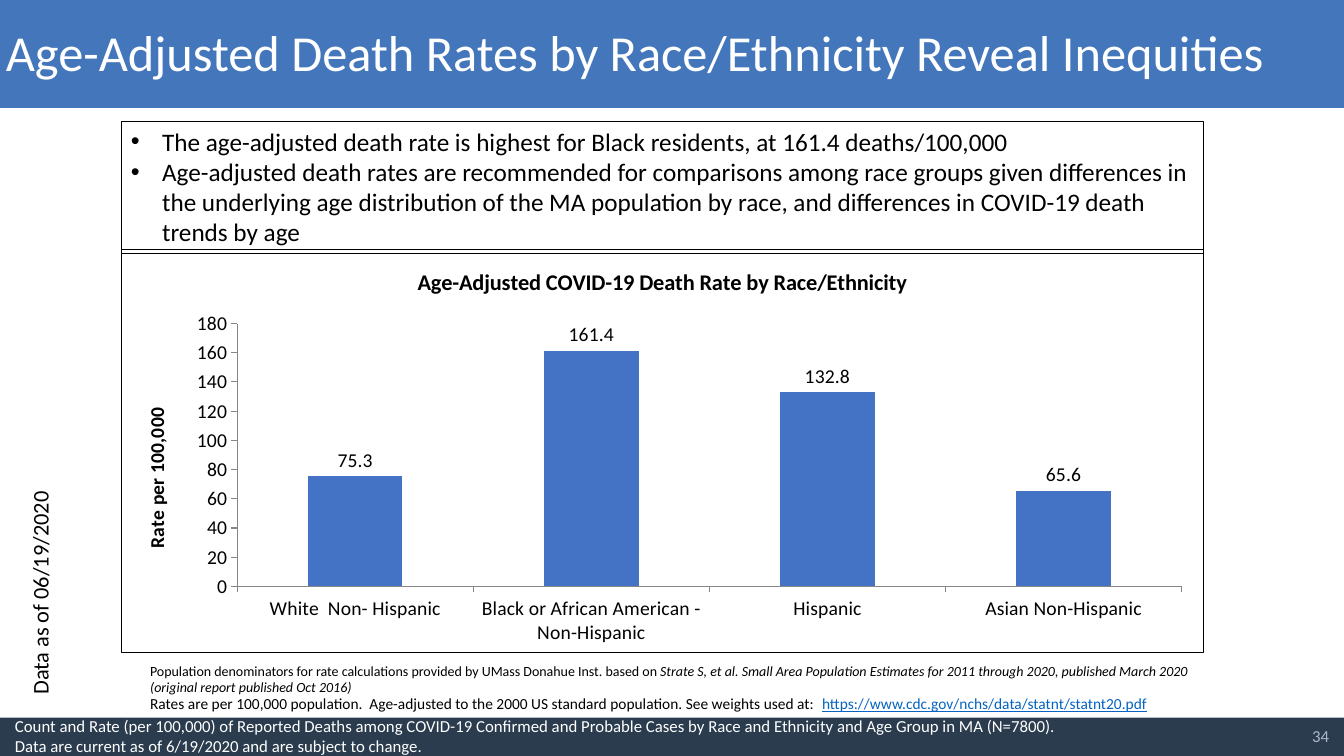
from lxml import etree
from pptx import Presentation
from pptx.chart.data import CategoryChartData as ChartData
from pptx.dml.color import RGBColor
from pptx.enum.chart import XL_CHART_TYPE as Kind, XL_LABEL_POSITION as Spot, XL_TICK_MARK as Tick
from pptx.enum.shapes import MSO_SHAPE as Shape
from pptx.enum.text import MSO_ANCHOR as Anchor, PP_ALIGN as Align
from pptx.oxml import parse_xml
from pptx.oxml.ns import qn
from pptx.util import Inches, Pt

FONT = "Calibri"
BLACK = RGBColor(0x00, 0x00, 0x00)
WHITE = RGBColor(0xFF, 0xFF, 0xFF)
BLUE = RGBColor(0x43, 0x76, 0xBB)
NAVY = RGBColor(0x2A, 0x3C, 0x4E)
PALE = RGBColor(0xAD, 0xB9, 0xCA)
LINK = RGBColor(0x05, 0x63, 0xC1)
BAR = RGBColor(0x44, 0x72, 0xC4)
GREY = RGBColor(0x86, 0x86, 0x86)

prs = Presentation()
prs.slide_width, prs.slide_height = Inches(13.33), Inches(7.5)
slide = prs.slides.add_slide(prs.slide_layouts[6])


def add_box(x, y, w, h, fill=None):
    box = slide.shapes.add_shape(Shape.RECTANGLE, Inches(x), Inches(y), Inches(w), Inches(h))
    box.shadow.inherit = False
    if fill is None:
        box.fill.background()
    else:
        box.fill.solid()
        box.fill.fore_color.rgb = fill
    box.line.fill.background()
    return box


def add_text(x, y, w, h, size, color, *parts):
    box = slide.shapes.add_textbox(Inches(x), Inches(y), Inches(w), Inches(h))
    box.text_frame.word_wrap = True
    para = box.text_frame.paragraphs[0]
    para.font.name, para.font.size = FONT, Pt(size)
    para.font.color.rgb = color
    for part in parts:
        para.add_run().text = part
    return box, para


# Header and footer bands
add_box(0, 0, 13.33, 1.07, BLUE)
add_box(0, 7.12, 13.33, 0.38, NAVY)

# Page number
page, para = add_text(10.29, 7.1, 2.99, 0.4, 12, PALE, "34")
page.text_frame.vertical_anchor = Anchor.MIDDLE
para.alignment = Align.RIGHT

# Title
title, para = add_text(-0.04, 0.23, 13.5, 1.1, 36, WHITE,
                       "Age-Adjusted Death Rates by Race/Ethnicity Reveal Inequities")
para.line_spacing = 0.9

# Date up the left side
date, para = add_text(-3.05, 3.36, 6.89, 0.37, 16, BLACK, "Data as of 06/19/2020")
date.rotation = 270

# Footer text
add_text(0.05, 7.05, 10.86, 0.5, 12, WHITE,
         "Count and Rate (per 100,000) of Reported Deaths among COVID-19 Confirmed and Probable "
         "Cases by Race and Ethnicity and Age Group in MA (N=7800). Data are current as of "
         "6/19/2020 and are subject to change.")

# Key points
points = [
    "The age-adjusted death rate is highest for Black residents, at 161.4 deaths/100,000",
    "Age-adjusted death rates are recommended for comparisons among race groups given "
    "differences in the underlying age distribution of the MA population by race, and "
    "differences in COVID-19 death trends by age",
]
panel = add_box(1.2, 1.2, 10.74, 1.31)
panel.line.color.rgb, panel.line.width = BLACK, Pt(0.5)
frame = panel.text_frame
frame.word_wrap, frame.vertical_anchor = True, Anchor.TOP
for i, point in enumerate(points):
    para = frame.add_paragraph() if i else frame.paragraphs[0]
    para.text, para.alignment = point, Align.LEFT
    para.font.name, para.font.size = FONT, Pt(18)
    para.font.color.rgb = BLACK
    props = para._p.get_or_add_pPr()
    props.set("marL", str(Inches(0.31)))
    props.set("indent", str(-Inches(0.31)))
    bullet = [etree.Element(qn("a:buFont"), typeface="Arial"),
              etree.Element(qn("a:buChar"), char="•")]
    for j, mark in enumerate(bullet):
        props.insert(j, mark)

# Notes under the chart
note, para = add_text(1.39, 6.84, 12.11, 0.29, 11, BLACK,
                      "Rates are per 100,000 population.  Age-adjusted to the 2000 US standard "
                      "population. See weights used at:  ",
                      "https://www.cdc.gov/nchs/data/statnt/statnt20.pdf")
link = para.runs[1].font
link.color.rgb, link.underline = LINK, True

note, para = add_text(1.39, 6.52, 10.86, 0.44, 10, BLACK,
                      "Population denominators for rate calculations provided by UMass Donahue "
                      "Inst. based on ",
                      "Strate S, et al. Small Area Population Estimates for 2011 through 2020, "
                      "published March 2020 (original report published Oct 2016)")
para.runs[1].font.italic = True

# Chart
data = ChartData()
data.categories = ["White  Non- Hispanic", "Black or African American - Non-Hispanic",
                   "Hispanic", "Asian Non-Hispanic"]
data.add_series("Series 1", [75.3, 161.4, 132.8, 65.6])
chart = slide.shapes.add_chart(Kind.COLUMN_CLUSTERED, Inches(1.2), Inches(2.47),
                               Inches(10.74), Inches(4.01), data).chart
chart.has_legend = False
chart.font.name, chart.font.size = FONT, Pt(14)
chart.font.color.rgb = BLACK

# Axes
cats, rates = chart.category_axis, chart.value_axis
for axis in (cats, rates):
    axis.has_major_gridlines = False
    axis.major_tick_mark, axis.minor_tick_mark = Tick.OUTSIDE, Tick.NONE
    axis.format.line.color.rgb = GREY
rates.minimum_scale, rates.maximum_scale, rates.major_unit = 0, 180, 20

# Chart and axis titles
for owner, text, size in ((chart, "Age-Adjusted COVID-19 Death Rate by Race/Ethnicity", 16),
                          (rates, "Rate per 100,000", 14)):
    name = owner.chart_title if owner is chart else owner.axis_title
    name.text_frame.text = text
    font = name.text_frame.paragraphs[0].font
    font.name, font.size, font.bold = FONT, Pt(size), True
    font.color.rgb = BLACK

# Bars and labels
plot = chart.plots[0]
plot.gap_width, plot.vary_by_categories = 150, False
bars = plot.series[0].format.fill
bars.solid()
bars.fore_color.rgb = BAR
plot.has_data_labels = True
plot.data_labels.show_value = True
plot.data_labels.position = Spot.OUTSIDE_END

# Chart border
border = parse_xml(
    '<c:spPr xmlns:c="http://schemas.openxmlformats.org/drawingml/2006/chart" '
    'xmlns:a="http://schemas.openxmlformats.org/drawingml/2006/main"><a:noFill/>'
    f'<a:ln w="{Pt(0.75)}"><a:solidFill><a:srgbClr val="{BLACK}"/></a:solidFill></a:ln></c:spPr>')
chart._chartSpace.find(qn("c:txPr")).addprevious(border)

prs.save("out.pptx")
